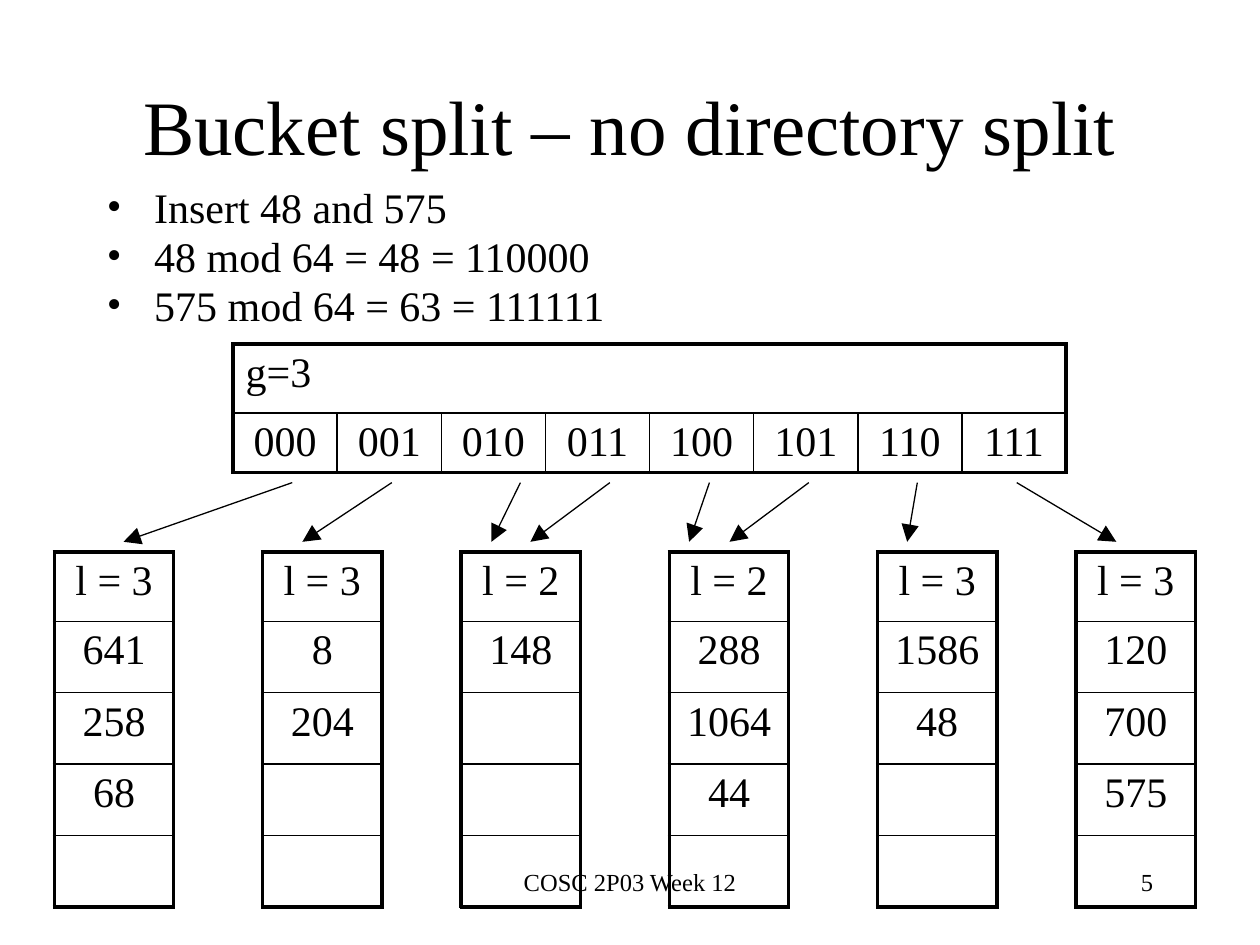
from lxml import etree
from pptx import Presentation
from pptx.dml import color
from pptx.enum import shapes, text
from pptx.oxml import ns
from pptx.util import Pt

FONT = "Times New Roman"
BLACK = "000000"
THICK, THIN = 2.25, 1
LEFT, CENTER, RIGHT = text.PP_ALIGN.LEFT, text.PP_ALIGN.CENTER, text.PP_ALIGN.RIGHT
PLAIN_TABLE = "{2D5ABB26-0587-4C30-8999-92F81FD0307C}"

CODES = [format(number, "03b") for number in range(8)]
BUCKETS = [
    ["l = 3", "641", "258", "68", ""],
    ["l = 3", "8", "204", "", ""],
    ["l = 2", "148", "", "", ""],
    ["l = 2", "288", "1064", "44", ""],
    ["l = 3", "1586", "48", "", ""],
    ["l = 3", "120", "700", "575", ""],
]
BUCKET_WIDTH, WIDE_GAP, NARROW_GAP = 68.2, 50.8, 45.3
GAPS = [WIDE_GAP, NARROW_GAP, WIDE_GAP, WIDE_GAP, NARROW_GAP]
POINTERS = [(167, 70.6), (223.9, 172.8), (297.4, 280.8), (348.5, 303.1),
            (405.4, 393.8), (462.2, 416.9), (524.2, 518.4), (581, 637.9)]


def rgb(value):
    return color.RGBColor.from_string(value)


def write(paragraph, content, size=24, align=LEFT, colour=BLACK, before=0, spacing=None):
    paragraph.alignment = align
    if spacing:
        paragraph.line_spacing = spacing
    if before:
        space = etree.SubElement(paragraph._p.get_or_add_pPr(), ns.qn("a:spcBef"))
        etree.SubElement(space, ns.qn("a:spcPct"), val=str(before * 1000))
    run = paragraph.add_run()
    run.text = content
    run.font.size = Pt(size)
    run.font.name = FONT
    run.font.color.rgb = rgb(colour)


def add_title(slide, box, content):
    title = slide.shapes.title
    title.left, title.top, title.width, title.height = map(Pt, box)
    title.text_frame.vertical_anchor = text.MSO_ANCHOR.MIDDLE
    write(title.text_frame.paragraphs[0], content, size=44, align=CENTER)


def add_text(slide, box, lines, bullet=None, **style):
    frame = slide.shapes.add_textbox(*map(Pt, box)).text_frame
    frame.word_wrap = True
    for index, line in enumerate(lines):
        paragraph = frame.add_paragraph() if index else frame.paragraphs[0]
        write(paragraph, line, **style)
        if bullet:
            properties = paragraph._p.get_or_add_pPr()
            properties.set("marL", str(Pt(27)))
            properties.set("indent", str(-Pt(27)))
            etree.SubElement(properties, ns.qn("a:buFont"), typeface=FONT)
            etree.SubElement(properties, ns.qn("a:buChar"), char=bullet)


def format_cell(cell, content="", align=CENTER, borders=(0, 0, 0, 0)):
    properties = cell._tc.get_or_add_tcPr()
    for side, width in zip("LRTB", borders):
        line = etree.SubElement(properties, ns.qn(f"a:ln{side}"), w=str(Pt(width)))
        if width:
            fill = etree.SubElement(line, ns.qn("a:solidFill"))
            etree.SubElement(fill, ns.qn("a:srgbClr"), val=BLACK)
        else:
            etree.SubElement(line, ns.qn("a:noFill"))
    cell.fill.background()
    if content:
        write(cell.text_frame.paragraphs[0], content, align=align, before=20)


def add_table(slide, left, top, widths, heights):
    frame = slide.shapes.add_table(len(heights), len(widths), Pt(left), Pt(top),
                                   Pt(sum(widths)), Pt(sum(heights)))
    table = frame.table
    table.first_row = table.horz_banding = False
    table._tbl.tblPr.find(ns.qn("a:tableStyleId")).text = PLAIN_TABLE
    for column, width in zip(table.columns, widths):
        column.width = Pt(width)
    for row, height in zip(table.rows, heights):
        row.height = Pt(height)
    return table


def add_directory(slide, left, top, width, heading, codes):
    count = len(codes)
    table = add_table(slide, left, top, [width / count] * count, [39.6, 33.8])
    for index, code in enumerate(codes):
        first, last = index == 0, index == count - 1
        format_cell(table.cell(0, index), heading if first else "", LEFT,
                    (THICK if first else 0, THICK if last else 0, THICK, THIN))
        code_cell = table.cell(1, index)
        format_cell(code_cell, code, CENTER,
                    (THICK if first else THIN, THICK if last else THIN, THIN, THICK))
        code_cell.margin_bottom = 0


def add_buckets(slide, left, top, buckets):
    depth = len(buckets[0])
    widths = [BUCKET_WIDTH]
    for gap in GAPS:
        widths += [gap, BUCKET_WIDTH]
    table = add_table(slide, left, top, widths, [39.6] + [40.8] * (depth - 1))
    for column in range(len(widths)):
        for row in range(depth):
            cell = table.cell(row, column)
            if column % 2:
                format_cell(cell, borders=(THICK, THICK, 0, 0))
            else:
                format_cell(cell, buckets[column // 2][row], CENTER,
                            (THICK, THICK, THICK if row == 0 else THIN,
                             THICK if row == depth - 1 else THIN))


def add_pointers(slide, top, height, pointers):
    for start, end in pointers:
        pointer = slide.shapes.add_connector(shapes.MSO_CONNECTOR.STRAIGHT, Pt(start),
                                             Pt(top), Pt(end), Pt(top + height))
        pointer.line.color.rgb = rgb(BLACK)
        pointer.line.width = Pt(0.75)
        etree.SubElement(pointer.line._get_or_add_ln(), ns.qn("a:tailEnd"),
                         type="triangle", w="lg", len="lg")
        etree.SubElement(pointer._element.spPr, ns.qn("a:effectLst"))


def main():
    presentation = Presentation()
    presentation.slide_width, presentation.slide_height = Pt(720), Pt(540)
    slide = presentation.slides.add_slide(presentation.slide_layouts[5])
    add_text(slide, (246, 492, 228, 36), ["COSC 2P03 Week 12"], size=14, align=CENTER)
    add_text(slide, (516, 492, 150, 36), ["5"], size=14, align=RIGHT)
    add_title(slide, (54, 26, 612, 90), "Bucket split – no directory split")
    add_text(slide, (54, 106, 612, 85),
             ["Insert 48 and 575", "48 mod 64 = 48 = 110000", "575 mod 64 = 63 = 111111"],
             bullet="•", before=20, spacing=0.8)
    add_directory(slide, 133.2, 196.5, 476, "g=3", CODES)
    add_buckets(slide, 31.1, 315.4, BUCKETS)
    add_pointers(slide, 275.8, 33.8, POINTERS)
    presentation.save("out.pptx")


if __name__ == "__main__":
    main()
